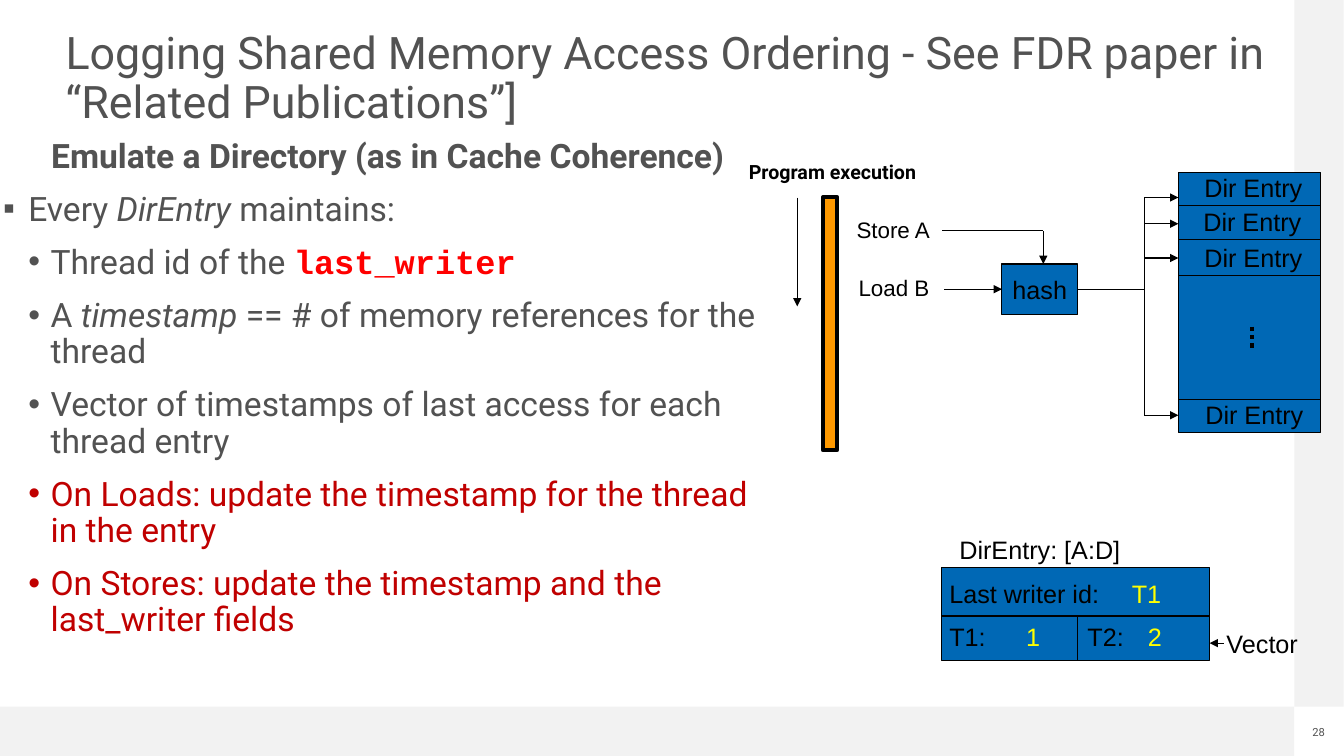
"""Builds the slide on logging the order of shared memory accesses."""
from dataclasses import dataclass

from lxml import etree
from pptx import Presentation
from pptx.dml.color import RGBColor
from pptx.enum.dml import MSO_LINE
from pptx.enum.shapes import MSO_CONNECTOR, MSO_SHAPE
from pptx.enum.text import MSO_ANCHOR, MSO_AUTO_SIZE, PP_ALIGN
from pptx.oxml.ns import qn
from pptx.util import Pt

RECT = MSO_SHAPE.RECTANGLE
STRAIGHT = MSO_CONNECTOR.STRAIGHT
DOTS = MSO_LINE.ROUND_DOT
MIDDLE, TOP = MSO_ANCHOR.MIDDLE, MSO_ANCHOR.TOP
GROW, FIXED = MSO_AUTO_SIZE.SHAPE_TO_FIT_TEXT, MSO_AUTO_SIZE.NONE
CENTER, LEFT = PP_ALIGN.CENTER, PP_ALIGN.LEFT
SIDES = ("margin_left", "margin_top", "margin_right", "margin_bottom")
TIGHT = dict.fromkeys(SIDES, 0)


@dataclass(frozen=True)
class Theme:
    gray: str = "525252"
    pale: str = "F2F2F2"
    blue: str = "0068B5"
    amber: str = "FF9900"
    black: str = "000000"
    yellow: str = "FFFF00"
    red: str = "FF0000"
    wine: str = "C00000"
    main: str = "Roboto"
    plain: str = "Arial"
    code: str = "Courier New"
    title: int = 32
    body: int = 24
    label: int = 18
    small: int = 16
    note: int = 14
    page: int = 8
    thin: float = 0.75
    thick: int = 3


def put(item, values):
    for name, value in values.items():
        setattr(item, name, value)


class Deck:
    def __init__(self, theme):
        self.theme = theme
        self.file = Presentation()
        put(self.file, {"slide_width": Pt(960), "slide_height": Pt(540)})
        self.slide = self.file.slides.add_slide(self.file.slide_layouts[5])
        self.shapes = self.slide.shapes

    def run(self, para, text, size, color, name, **style):
        run = para.add_run()
        run.text = text
        put(run.font, {"size": Pt(size), "name": name, "bold": False, **style})
        run.font.color.rgb = RGBColor.from_string(color)

    def title(self, text, *spot):
        box = self.shapes.title
        put(box, dict(zip(("left", "top", "width", "height"), map(Pt, spot))))
        put(box.text_frame, {**TIGHT, "word_wrap": True, "auto_size": FIXED,
                             "vertical_anchor": MIDDLE})
        para = box.text_frame.paragraphs[0]
        put(para, {"alignment": LEFT, "line_spacing": 0.9})
        self.run(para, text, self.theme.title, self.theme.gray, self.theme.main)

    def rect(self, spot, fill, width=0):
        box = self.shapes.add_shape(RECT, *map(Pt, spot))
        box.shadow.inherit = False
        box.fill.solid()
        box.fill.fore_color.rgb = RGBColor.from_string(fill)
        if width:
            box.line.color.rgb = RGBColor.from_string(self.theme.black)
            box.line.width = Pt(width)
        else:
            box.line.fill.background()
        return box

    def line(self, ends, arrow=False, width=None, dash=None):
        wire = self.shapes.add_connector(STRAIGHT, *map(Pt, ends))
        wire.line.color.rgb = RGBColor.from_string(self.theme.black)
        put(wire.line, {"width": Pt(width or self.theme.thin), "dash_style": dash})
        if arrow:
            etree.SubElement(wire.line._get_or_add_ln(), qn("a:tailEnd"), type="triangle")
        etree.SubElement(wire._element.spPr, qn("a:effectLst"))
        return wire

    def label(self, text, left, top, width, size=None, color=None, name=None, **style):
        size = size or self.theme.label
        box = self.shapes.add_textbox(*map(Pt, (left, top, width, size * 1.2 + 7.2)))
        put(box.text_frame, {"word_wrap": False, "auto_size": GROW})
        self.run(box.text_frame.paragraphs[0], text, size, color or self.theme.black,
                 name or self.theme.plain, **style)
        return box

    def points(self, spot, rows):
        frame = self.shapes.add_textbox(*map(Pt, spot)).text_frame
        put(frame, {**TIGHT, "word_wrap": True, "auto_size": FIXED,
                    "vertical_anchor": TOP})
        for num, (level, mark, runs) in enumerate(rows):
            para = frame.add_paragraph() if num else frame.paragraphs[0]
            props = para._p.get_or_add_pPr()
            margin, hang = ((18, -18), (34, -16))[level]
            props.set("marL", str(Pt(margin)))
            props.set("indent", str(Pt(hang)))
            if mark:
                etree.SubElement(props, qn("a:buFont"), typeface=self.theme.plain)
                etree.SubElement(props, qn("a:buChar"), char=mark)
            put(para, {"level": level, "line_spacing": 0.9,
                       "space_before": Pt(12 if num else 0),
                       "alignment": LEFT if mark else CENTER})
            for text, style in runs:
                base = {"size": self.theme.body, "color": self.theme.gray,
                        "name": self.theme.main}
                self.run(para, text, **{**base, **style})


def main():
    look = Theme()
    deck = Deck(look)
    deck.rect((0, 504.7, 924.5, 35.3), look.pale)
    deck.rect((924.5, 0, 35.3, 504.7), look.pale)
    page = deck.label("28", 937.4, 518.4, 10, look.page, look.gray, look.main)
    put(page.text_frame, TIGHT)
    page.height = Pt(9.4)
    deck.title("Logging Shared Memory Access Ordering - See FDR paper in "
               "“Related Publications”]", 46.8, 19.4, 866.9, 74.9)

    slant, wine = {"italic": True}, {"color": look.wine}
    code = {"name": look.code, "color": look.red, "bold": True}
    deck.points((2.2, 99.4, 549.4, 367.9), [
        (0, "", [("Emulate a Directory (as in Cache Coherence)", {"bold": True})]),
        (0, "▪", [("Every ", {}), ("DirEntry ", slant), ("maintains:", {})]),
        (1, "•", [("Thread id of the ", {}), ("last_writer", code)]),
        (1, "•", [("A ", {}), ("timestamp", slant),
                  (" == # of memory references for the thread", {})]),
        (1, "•", [("Vector of timestamps of last access for each thread entry", {})]),
        (1, "•", [("On Loads: update the timestamp for the thread in the entry", wine)]),
        (1, "•", [("On Stores: update the timestamp and the last_writer fields", wine)]),
    ])

    deck.rect((672.5, 405.4, 191.5, 66.2), look.blue, look.thin)
    deck.line((672.5, 440, 864, 440))
    deck.line((769.7, 440, 769.7, 471.6))
    deck.line((874, 459.4, 864, 459.4), True)
    for text, left, top, width, color in (
            ("DirEntry: [A:D]", 678.2, 378, 129.6, look.black),
            ("Last writer id:", 671, 409.7, 121.7, look.black),
            ("T1", 801.4, 409.7, 35.3, look.yellow),
            ("T1:", 671, 440, 40.3, look.black),
            ("1", 725.8, 440, 24.5, look.yellow),
            ("T2:", 769.7, 440, 40.3, look.black),
            ("2", 812.9, 440, 24.5, look.yellow),
            ("Vector", 869, 445, 71.3, look.black)):
        deck.label(text, left, top, width, color=color)

    deck.label("Program execution", 527.8, 110.9, 139.7, look.note, name=look.main,
               bold=True)
    deck.line((569.5, 141.1, 569.5, 218.9), True)
    deck.rect((587.9, 140.8, 10.1, 180.7), look.amber, look.thick)
    deck.label("Store A", 604.8, 150.5, 67.7, look.small)
    deck.label("Load B", 606.2, 192.2, 64.8, look.small)

    table, right, bus = 841.7, 943.5, 817.2
    deck.rect((table, 123.1, right - table, 185.8), look.blue, look.thin)
    for row in (146.9, 171, 196.6, 285.1):
        deck.line((table, row, right, row))
    deck.line((894.2, 233.3, 894.2, 251.3), width=look.thick, dash=DOTS)
    for left, top, tip in ((853.2, 119.5, 141.1), (852.5, 144, 159.8),
                           (853.2, 169.9, 184.3), (853.9, 281.8, 296.6)):
        deck.label("Dir Entry", left, top, 84.2)
        deck.line((bus, tip, table, tip), True)
    deck.line((bus, 141.1, bus, 296.6))

    hash_box = deck.rect((715.7, 188.6, 54, 36), look.blue, look.thin)
    put(hash_box.text_frame, {"word_wrap": False, "vertical_anchor": MIDDLE})
    para = hash_box.text_frame.paragraphs[0]
    para.alignment = CENTER
    deck.run(para, "hash", look.label, look.black, look.plain)
    deck.line((673.2, 164.9, 745.2, 164.9))
    deck.line((745.2, 164.9, 745.2, 188.6), True)
    deck.line((674.6, 206.6, 715.7, 206.6), True).end_connect(hash_box, 1)
    deck.line((769.7, 206.6, bus, 206.6)).begin_connect(hash_box, 3)
    deck.file.save("out.pptx")


if __name__ == "__main__":
    main()
